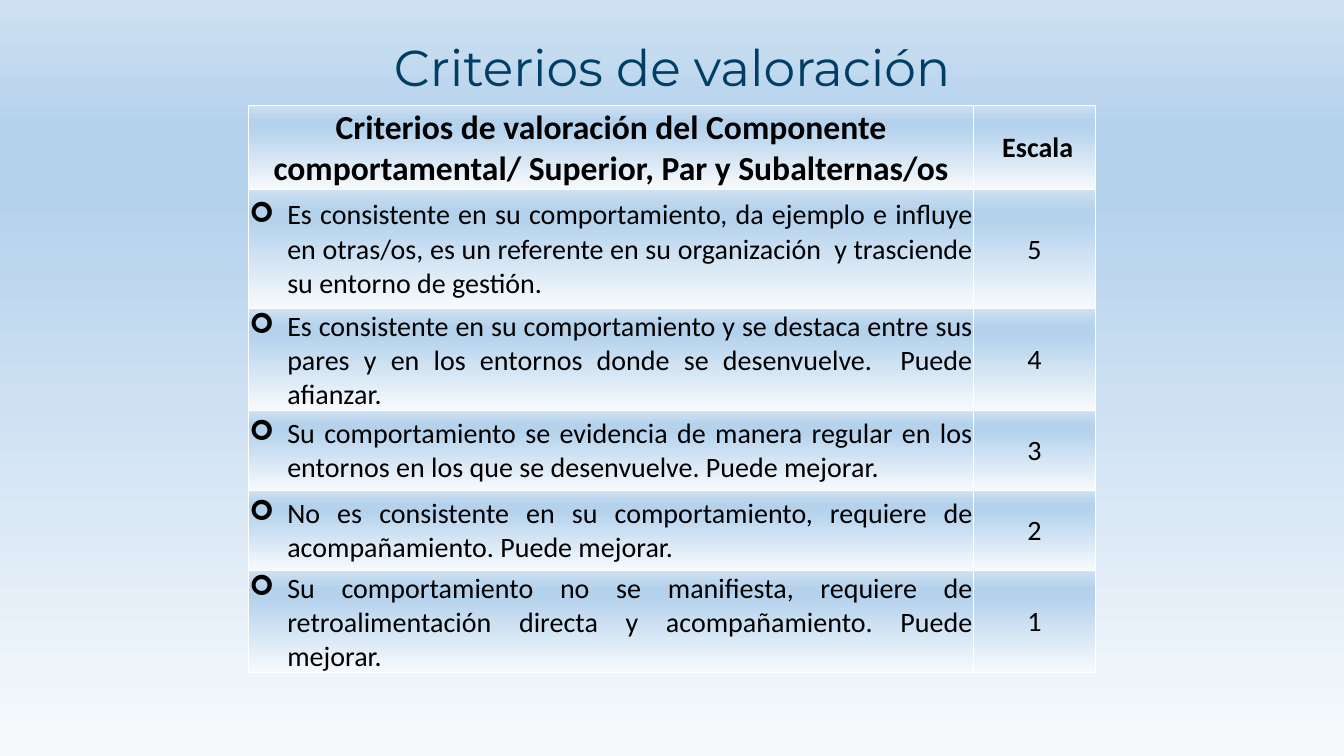
from dataclasses import dataclass

from lxml.etree import SubElement
from pptx import Presentation
from pptx.dml.color import RGBColor
from pptx.enum.text import MSO_ANCHOR, PP_ALIGN
from pptx.oxml import parse_xml
from pptx.oxml.ns import nsdecls, qn
from pptx.util import Pt


@dataclass(frozen=True)
class Theme:
    title_color: str = "003E65"
    text_color: str = "000000"
    border_color: str = "FFFFFF"
    gradient: tuple = ((0, "F7FAFD"), (74, "B5D2EC"), (83, "B5D2EC"), (100, "CEE1F2"))
    title_font: str = "Montserrat"
    body_font: str = "Calibri"
    title_size: int = 36
    heading_size: int = 24
    body_size: int = 20


THEME = Theme()

HEADINGS = (
    "Criterios de valoración del Componente comportamental/ Superior, Par y Subalternas/os",
    " Escala",
)
CRITERIA = (
    ("Es consistente en su comportamiento, da ejemplo e influye en otras/os, "
     "es un referente en su organización  y trasciende su entorno de gestión.", 5),
    ("Es consistente en su comportamiento y se destaca entre sus pares y en los "
     "entornos donde se desenvuelve.  Puede afianzar.", 4),
    ("Su comportamiento se evidencia de manera regular en los entornos en los que "
     "se desenvuelve. Puede mejorar.", 3),
    ("No es consistente en su comportamiento, requiere de acompañamiento. "
     "Puede mejorar.", 2),
    ("Su comportamiento no se manifiesta, requiere de retroalimentación directa y "
     "acompañamiento. Puede mejorar.", 1),
)
ROW_HEIGHTS = (60, 85, 73, 57, 57, 73)
SCALE_WIDTH = 87


def write_text(frame, text, *, size=THEME.body_size, font=THEME.body_font,
               color=THEME.text_color, bold=False, align=PP_ALIGN.CENTER,
               spacing=None, bullet=None, indent=27):
    paragraph = frame.paragraphs[0]
    if bullet:
        properties = paragraph._p.get_or_add_pPr()
        properties.set("marL", str(Pt(indent)))
        properties.set("indent", str(-Pt(indent)))
        SubElement(properties, qn("a:buFont"), typeface="Wingdings")
        SubElement(properties, qn("a:buChar"), char=bullet)
    paragraph.alignment = align
    if spacing:
        paragraph.line_spacing = spacing
    run = paragraph.add_run()
    run.text = text
    run.font.name = font
    run.font.size = Pt(size)
    run.font.bold = bold
    run.font.color.rgb = RGBColor.from_string(color)


def apply_gradient(fill, owner):
    """Fill with the theme gradient, running from bottom to top."""
    fill.gradient()
    fill.gradient_angle = 90
    stops = owner.find(".//" + qn("a:gsLst"))
    for stop in list(stops):
        stops.remove(stop)
    for position, color in THEME.gradient:
        stop = SubElement(stops, qn("a:gs"), pos=str(position * 1000))
        SubElement(stop, qn("a:srgbClr"), val=color)


def style_cell(cell):
    cell.vertical_anchor = MSO_ANCHOR.MIDDLE
    cell.margin_left = cell.margin_right = cell.margin_top = Pt(0.7)
    cell.margin_bottom = Pt(0)
    properties = cell._tc.get_or_add_tcPr()
    apply_gradient(cell.fill, properties)
    # Borders come before the fill in the cell properties
    for index, side in enumerate("LRTB"):
        properties.insert(index, parse_xml(
            f'<a:ln{side} {nsdecls("a")} w="{Pt(1)}"><a:solidFill>'
            f'<a:srgbClr val="{THEME.border_color}"/></a:solidFill></a:ln{side}>'))


def add_title(slide, left, top, width, height):
    frame = slide.shapes.add_textbox(Pt(left), Pt(top), Pt(width), Pt(height)).text_frame
    frame.word_wrap = True
    frame.vertical_anchor = MSO_ANCHOR.MIDDLE
    write_text(frame, "Criterios de valoración", size=THEME.title_size,
               font=THEME.title_font, color=THEME.title_color, spacing=0.9)


def add_criteria_table(slide, left, top, width):
    table = slide.shapes.add_table(
        len(ROW_HEIGHTS), 2, Pt(left), Pt(top), Pt(width), Pt(sum(ROW_HEIGHTS))).table
    table.first_row = table.horz_banding = False
    for column, column_width in zip(table.columns, (width - SCALE_WIDTH, SCALE_WIDTH)):
        column.width = Pt(column_width)
    for row, height in zip(table.rows, ROW_HEIGHTS):
        row.height = Pt(height)
    for cell in table.iter_cells():
        style_cell(cell)

    # Heading row
    for column, (heading, size) in enumerate(
            zip(HEADINGS, (THEME.heading_size, THEME.body_size))):
        write_text(table.cell(0, column).text_frame, heading, size=size, bold=True)

    # One row per criterion
    for row, (criterion, score) in enumerate(CRITERIA, start=1):
        write_text(table.cell(row, 0).text_frame, criterion,
                   align=PP_ALIGN.JUSTIFY, bullet="➢")
        write_text(table.cell(row, 1).text_frame, str(score))


def main():
    presentation = Presentation()
    presentation.slide_width, presentation.slide_height = Pt(960), Pt(540)
    slide = presentation.slides.add_slide(presentation.slide_layouts[6])
    apply_gradient(slide.background.fill, slide._element)
    add_title(slide, 66, 20, 828, 61)
    add_criteria_table(slide, 177.5, 75.5, 605)
    presentation.save("out.pptx")


if __name__ == "__main__":
    main()
